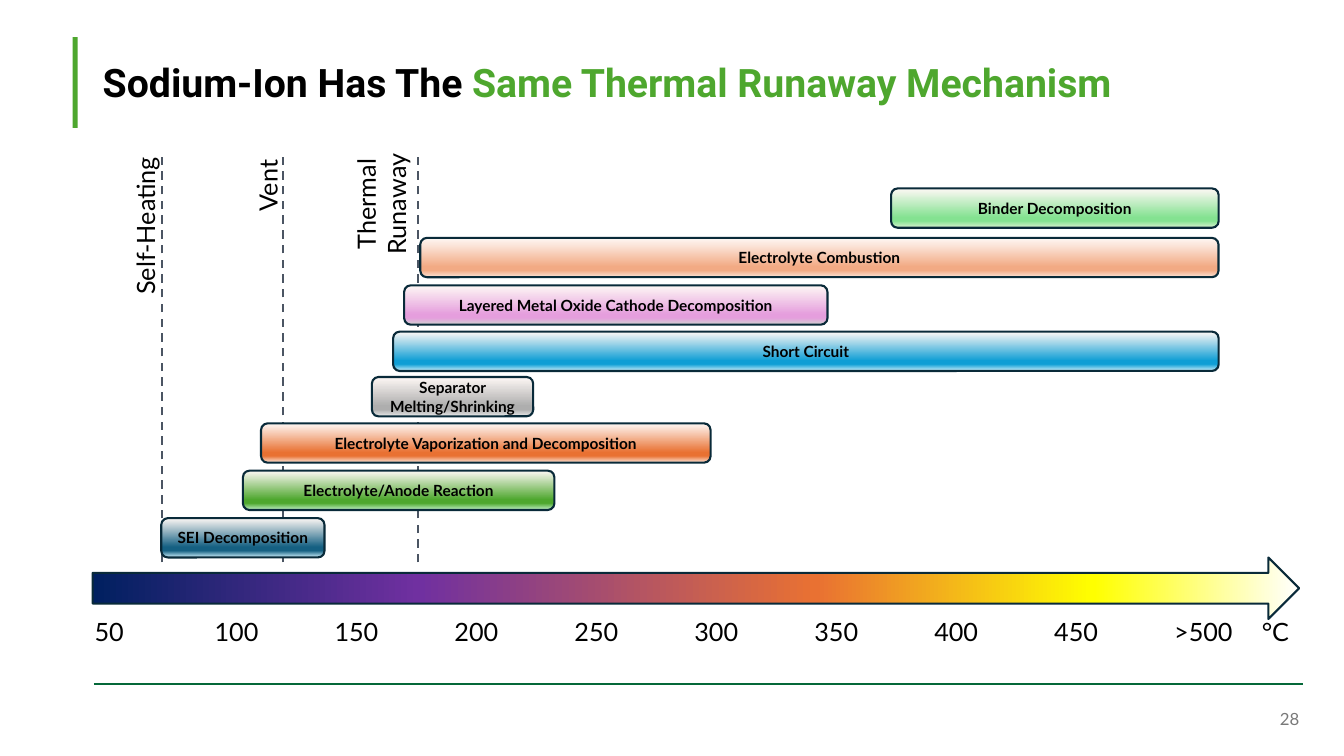
from dataclasses import dataclass

from lxml.etree import SubElement
from pptx import Presentation
from pptx.dml.color import RGBColor
from pptx.enum.dml import MSO_LINE
from pptx.enum.shapes import MSO_CONNECTOR, MSO_SHAPE
from pptx.enum.text import MSO_ANCHOR, PP_ALIGN
from pptx.oxml.ns import qn
from pptx.shapes.autoshape import Shape
from pptx.slide import Slide
from pptx.text.text import TextFrame
from pptx.util import Pt

BLACK = RGBColor(0x00, 0x00, 0x00)
WHITE = RGBColor(0xFF, 0xFF, 0xFF)
GREEN = RGBColor(0x4E, 0xA7, 0x2E)
RULE_GREEN = RGBColor(0x05, 0x68, 0x39)
GREY = RGBColor(0x79, 0x79, 0x79)
DASH_GREY = RGBColor(0x4B, 0x55, 0x63)
OUTLINE = RGBColor(0x09, 0x2A, 0x39)
NAVY = RGBColor(0x00, 0x20, 0x60)
PURPLE = RGBColor(0x70, 0x30, 0xA0)
ORANGE = RGBColor(0xE9, 0x71, 0x32)
YELLOW = RGBColor(0xFF, 0xFF, 0x00)
CREAM = RGBColor(0xFE, 0xF8, 0xF5)
TEAL = RGBColor(0x15, 0x60, 0x82)
BLUE = RGBColor(0x0F, 0x9E, 0xD5)
PALE_BLUE = RGBColor(0xCA, 0xEE, 0xFB)
MINT = RGBColor(0xC2, 0xF1, 0xC8)
PINK = RGBColor(0xE5, 0x9E, 0xDD)
SILVER = RGBColor(0xD1, 0xD1, 0xD1)
PEACH = RGBColor(0xF2, 0xAA, 0x84)
PALE_PEACH = RGBColor(0xFB, 0xE3, 0xD6)
MID_GREY = RGBColor(0xAE, 0xAE, 0xAE)
PALE_GREY = RGBColor(0xE8, 0xE8, 0xE8)
LIGHT_GREEN = RGBColor(0x84, 0xE2, 0x91)
PALE_GREEN = RGBColor(0xD9, 0xF2, 0xD0)

BODY_FONT = "Lato"
TITLE_FONT = "Roboto"
BAR_HEIGHT = 28.1
TICK_LEFT, TICK_TOP, TICK_PITCH = 60.5, 437, 85.68


@dataclass(frozen=True)
class Reaction:
    name: str
    left: float
    top: float
    width: float
    main: RGBColor
    edge: RGBColor


@dataclass(frozen=True)
class Stage:
    name: str
    line_x: float
    line_top: float
    left: float
    top: float
    width: float
    height: float


REACTIONS = [
    Reaction("SEI Decomposition", 115.2, 370.1, 116.6, TEAL, PALE_BLUE),
    Reaction("Electrolyte/Anode Reaction", 173.5, 336.2, 222.5, GREEN, MINT),
    Reaction("Electrolyte Vaporization and Decomposition", 186.5, 302.4, 321.1, ORANGE, PALE_PEACH),
    Reaction("Separator Melting/Shrinking", 265.7, 269.3, 115.2, MID_GREY, PALE_GREY),
    Reaction("Short Circuit", 280.8, 236.9, 589.7, BLUE, PALE_BLUE),
    Reaction("Layered Metal Oxide Cathode Decomposition", 288.7, 203.8, 302.4, PINK, SILVER),
    Reaction("Electrolyte Combustion", 300.2, 169.9, 570.2, PEACH, PALE_PEACH),
    Reaction("Binder Decomposition", 636.5, 134.6, 234, LIGHT_GREEN, PALE_GREEN),
]
STAGES = [
    Stage("Self-Heating", 115.5, 110.2, 45.4, 146.9, 116.6, 28.8),
    Stage("Vent", 202.3, 110.2, 162, 118.1, 58.3, 28.8),
    Stage("Thermal Runaway", 298.8, 108.7, 221.8, 120.2, 101.5, 51.1),
]
TEMPERATURES = ["50", "100", "150", "200", "250", "300", "350", "400", "450", ">500"]
SCALE_STOPS = [(0, NAVY), (27, PURPLE), (60, ORANGE), (83, YELLOW), (100, WHITE)]


def write(frame: TextFrame, text: str, size: float, color: RGBColor = BLACK,
          align: PP_ALIGN = PP_ALIGN.LEFT, bold: bool = False) -> None:
    frame.text = text
    frame.word_wrap = True
    paragraph = frame.paragraphs[0]
    paragraph.alignment = align
    font = paragraph.runs[0].font
    font.name, font.size, font.bold = BODY_FONT, Pt(size), bold
    font.color.rgb = color


def add_label(slide: Slide, text: str, left: float, top: float, width: float, height: float,
              size: float = 18, color: RGBColor = BLACK,
              align: PP_ALIGN = PP_ALIGN.LEFT) -> Shape:
    label = slide.shapes.add_textbox(Pt(left), Pt(top), Pt(width), Pt(height))
    write(label.text_frame, text, size, color, align)
    return label


def add_rule(slide: Slide, x1: float, y1: float, x2: float, y2: float,
             color: RGBColor, dashed: bool = False) -> None:
    rule = slide.shapes.add_connector(MSO_CONNECTOR.STRAIGHT, Pt(x1), Pt(y1), Pt(x2), Pt(y2))
    rule.line.color.rgb = color
    rule.line.width = Pt(1.5)
    if dashed:
        rule.line.dash_style = MSO_LINE.DASH
    SubElement(rule.element.spPr, qn("a:effectLst"))


def add_gradient_shape(slide: Slide, kind: MSO_SHAPE, left: float, top: float, width: float,
                       height: float, stops: list[tuple[int, RGBColor]], angle: float) -> Shape:
    shape = slide.shapes.add_shape(kind, Pt(left), Pt(top), Pt(width), Pt(height))
    shape.shadow.inherit = False
    shape.line.color.rgb = OUTLINE
    shape.line.width = Pt(1.5)
    shape.fill.gradient()
    shape.fill.gradient_angle = angle
    stop_list = shape.element.spPr.find(".//" + qn("a:gsLst"))
    for default_stop in list(stop_list):
        stop_list.remove(default_stop)
    for percent, color in stops:
        stop = SubElement(stop_list, qn("a:gs"), pos=str(percent * 1000))
        SubElement(stop, qn("a:srgbClr"), val=str(color))
    return shape


def add_reaction(slide: Slide, reaction: Reaction) -> None:
    stops = [(0, CREAM), (74, reaction.main), (83, reaction.main), (100, reaction.edge)]
    bar = add_gradient_shape(slide, MSO_SHAPE.ROUNDED_RECTANGLE, reaction.left, reaction.top,
                             reaction.width, BAR_HEIGHT, stops, 270)
    write(bar.text_frame, reaction.name, 11, align=PP_ALIGN.CENTER, bold=True)
    bar.text_frame.vertical_anchor = MSO_ANCHOR.MIDDLE


def add_title(slide: Slide) -> None:
    title = slide.shapes.title
    title.left, title.top, title.width, title.height = Pt(66.2), Pt(37.4), Pt(828), Pt(43.9)
    title.text_frame.vertical_anchor = MSO_ANCHOR.MIDDLE
    paragraph = title.text_frame.paragraphs[0]
    paragraph.alignment = PP_ALIGN.LEFT
    paragraph.line_spacing = Pt(32)
    for text, color in [("Sodium-Ion Has The ", BLACK), ("Same Thermal Runaway Mechanism", GREEN)]:
        run = paragraph.add_run()
        run.text = text
        run.font.name, run.font.size, run.font.bold = TITLE_FONT, Pt(28), True
        run.font.color.rgb = color


def main() -> None:
    presentation = Presentation()
    presentation.slide_width, presentation.slide_height = Pt(960), Pt(540)
    slide = presentation.slides.add_slide(presentation.slide_layouts[5])

    add_title(slide)
    accent = slide.shapes.add_shape(MSO_SHAPE.RECTANGLE, Pt(51.8), Pt(26.6), Pt(3.6), Pt(64.8))
    accent.shadow.inherit = False
    accent.fill.solid()
    accent.fill.fore_color.rgb = GREEN
    accent.line.fill.background()

    add_rule(slide, 67, 488.9, 931, 488.9, RULE_GREEN)
    page_number = add_label(slide, "28", 719.3, 499, 216, 28.8, 12, GREY, PP_ALIGN.RIGHT)
    page_number.text_frame.vertical_anchor = MSO_ANCHOR.MIDDLE

    for stage in STAGES:
        add_rule(slide, stage.line_x, 401.8, stage.line_x, stage.line_top, DASH_GREY, dashed=True)

    add_gradient_shape(slide, MSO_SHAPE.RIGHT_ARROW, 66.2, 398.2, 861.8, 43.9, SCALE_STOPS, 0)
    for index, temperature in enumerate(TEMPERATURES):
        add_label(slide, temperature, TICK_LEFT + index * TICK_PITCH, TICK_TOP, 67.7, 28.8)
    add_label(slide, "°C", 894.2, TICK_TOP, 65, 28.8)

    for reaction in REACTIONS:
        add_reaction(slide, reaction)
    for stage in STAGES:
        label = add_label(slide, stage.name, stage.left, stage.top, stage.width, stage.height,
                          align=PP_ALIGN.CENTER)
        label.rotation = 270

    presentation.save("out.pptx")


if __name__ == "__main__":
    main()
